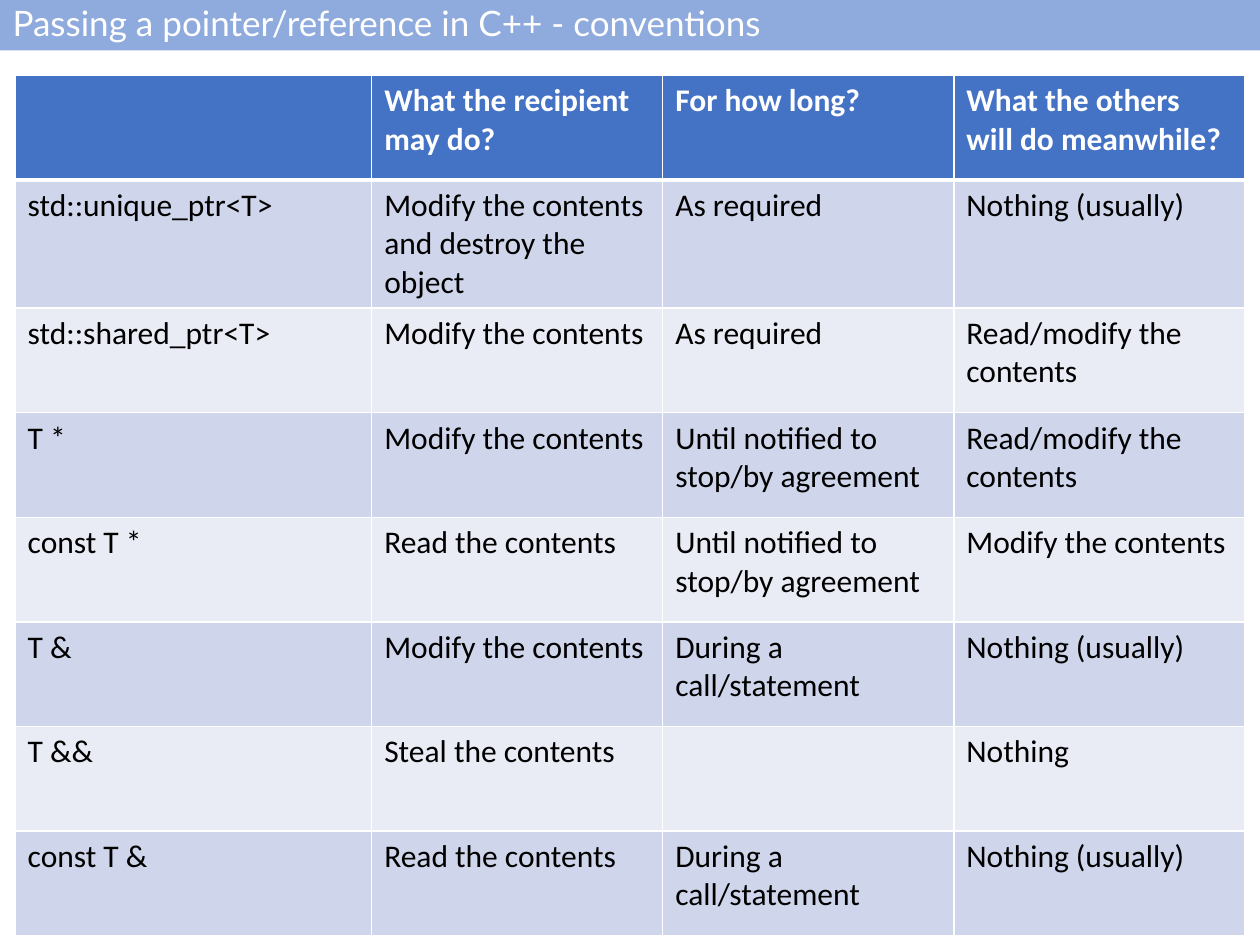
from lxml.etree import SubElement
from pptx import Presentation
from pptx.dml.color import RGBColor
from pptx.enum.text import MSO_ANCHOR, MSO_AUTO_SIZE, PP_ALIGN
from pptx.oxml.ns import qn
from pptx.util import Emu, Pt

EMU_PER_PX = 9144
WHITE, BLACK = "FFFFFF", "000000"
TITLE_FILL, HEADER_FILL = "8FAADC", "4472C4"
BAND_FILLS = ("E9EBF5", "CFD5EA")
COLUMN_WIDTHS = (283, 231, 231, 231)
ROW_HEIGHT, TALL_ROW_HEIGHT = 83, 97

CONVENTIONS = (
    ("", "What the recipient may do?", "For how long?", "What the others will do meanwhile?"),
    ("std::unique_ptr<T>", "Modify the contents and destroy the object", "As required", "Nothing (usually)"),
    ("std::shared_ptr<T>", "Modify the contents", "As required", "Read/modify the contents"),
    ("T *", "Modify the contents", "Until notified to stop/by agreement", "Read/modify the contents"),
    ("const T *", "Read the contents", "Until notified to stop/by agreement", "Modify the contents"),
    ("T &", "Modify the contents", "During a call/statement", "Nothing (usually)"),
    ("T &&", "Steal the contents", "", "Nothing"),
    ("const T &", "Read the contents", "During a call/statement", "Nothing (usually)"),
)


def px(length):
    return Emu(length * EMU_PER_PX)


def color(value):
    return RGBColor.from_string(value)


def paint(fill, value):
    fill.solid()
    fill.fore_color.rgb = color(value)


def add_run(paragraph, text, font_name, size, text_color, bold=False):
    run = paragraph.add_run()
    run.text = text
    run.font.name = font_name
    run.font.size = Pt(size)
    run.font.bold = bold
    run.font.color.rgb = color(text_color)


def format_title(title, text):
    title.left, title.top, title.width, title.height = px(0), px(0), px(1000), px(40)
    paint(title.fill, TITLE_FILL)
    frame = title.text_frame
    frame.auto_size = MSO_AUTO_SIZE.NONE
    frame.word_wrap = True
    frame.vertical_anchor = MSO_ANCHOR.MIDDLE
    paragraph = frame.paragraphs[0]
    paragraph.alignment = PP_ALIGN.LEFT
    paragraph.line_spacing = 0.9
    add_run(paragraph, text, "Lato", 20, WHITE)


def set_borders(cell, top, bottom):
    properties = cell._tc.get_or_add_tcPr()
    for side, width in (("L", 1), ("R", 1), ("T", top), ("B", bottom)):
        line = SubElement(properties, qn(f"a:ln{side}"), w=str(Pt(width)))
        solid = SubElement(line, qn("a:solidFill"))
        SubElement(solid, qn("a:srgbClr"), val=WHITE)


def format_cell(cell, text, row_index):
    is_header = row_index == 0
    set_borders(cell, top=3 if row_index == 1 else 1, bottom=3 if is_header else 1)
    paint(cell.fill, HEADER_FILL if is_header else BAND_FILLS[row_index % 2])
    paragraph = cell.text_frame.paragraphs[0]
    paragraph.font.size = Pt(18)
    if text:
        add_run(paragraph, text, "Calibri", 18, WHITE if is_header else BLACK, is_header)


def add_conventions_table(slide):
    row_heights = [ROW_HEIGHT] * len(CONVENTIONS)
    row_heights[1] = TALL_ROW_HEIGHT
    table = slide.shapes.add_table(
        len(CONVENTIONS), len(COLUMN_WIDTHS),
        px(12), px(60), px(sum(COLUMN_WIDTHS)), px(sum(row_heights)),
    ).table
    for column, width in zip(table.columns, COLUMN_WIDTHS):
        column.width = px(width)
    for row_index, texts in enumerate(CONVENTIONS):
        table.rows[row_index].height = px(row_heights[row_index])
        for column_index, text in enumerate(texts):
            format_cell(table.cell(row_index, column_index), text, row_index)


def main():
    presentation = Presentation()
    presentation.slide_width, presentation.slide_height = px(1000), px(750)
    slide = presentation.slides.add_slide(presentation.slide_layouts[5])
    format_title(slide.shapes.title, "Passing a pointer/reference in C++ - conventions")
    add_conventions_table(slide)
    presentation.save("out.pptx")


if __name__ == "__main__":
    main()
